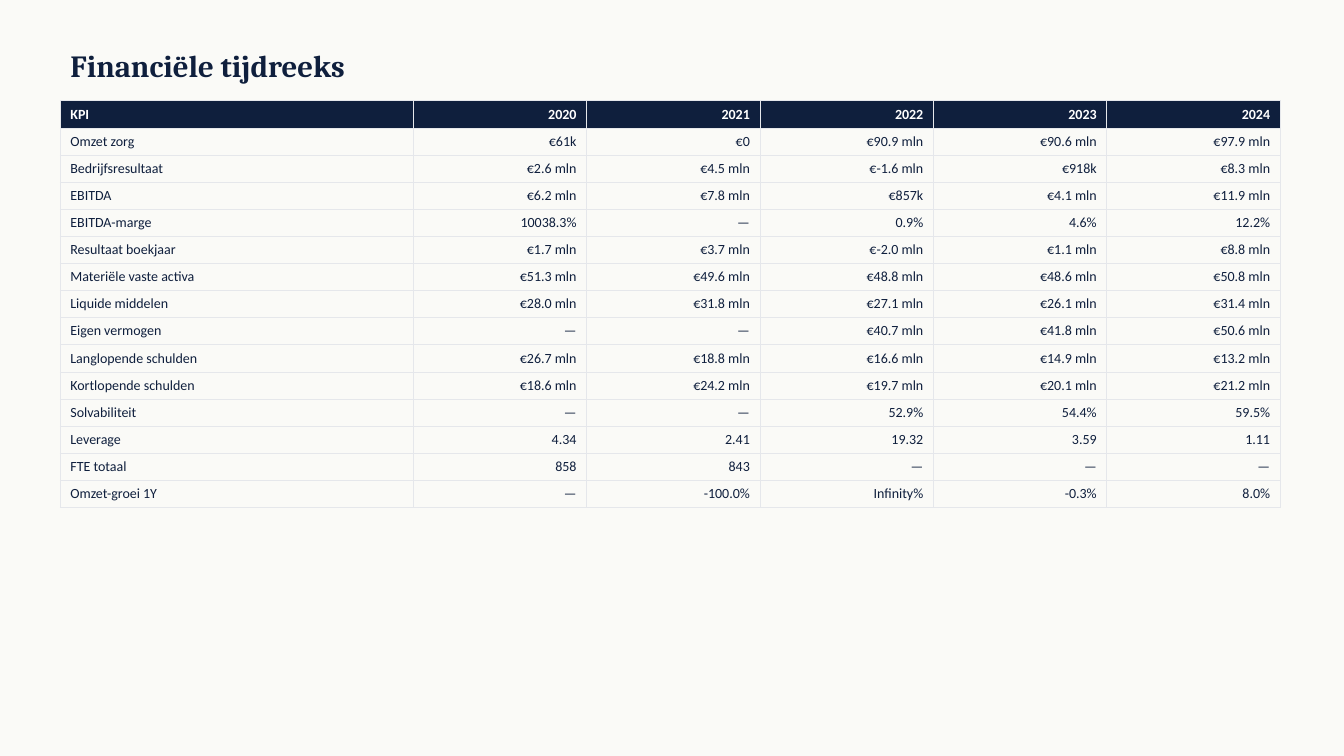
from lxml.etree import SubElement
from pptx import Presentation
from pptx.dml.color import RGBColor
from pptx.enum.text import MSO_ANCHOR, MSO_AUTO_SIZE, PP_ALIGN
from pptx.oxml.ns import qn
from pptx.util import Cm, Pt

NAVY, WHITE, PAPER, GRID = "0F1F3D", "FFFFFF", "FAFAF7", "E5E7EB"
TITLE = {"name": "Cambria", "size": Pt(22), "bold": True}
HEAD = {"name": "Calibri", "size": Pt(10), "bold": True}
BODY = HEAD | {"bold": False}

ROWS = [
    ("KPI", "2020", "2021", "2022", "2023", "2024"),
    ("Omzet zorg", "€61k", "€0", "€90.9 mln", "€90.6 mln", "€97.9 mln"),
    ("Bedrijfsresultaat", "€2.6 mln", "€4.5 mln", "€-1.6 mln", "€918k", "€8.3 mln"),
    ("EBITDA", "€6.2 mln", "€7.8 mln", "€857k", "€4.1 mln", "€11.9 mln"),
    ("EBITDA-marge", "10038.3%", "—", "0.9%", "4.6%", "12.2%"),
    ("Resultaat boekjaar", "€1.7 mln", "€3.7 mln", "€-2.0 mln", "€1.1 mln", "€8.8 mln"),
    ("Materiële vaste activa", "€51.3 mln", "€49.6 mln", "€48.8 mln", "€48.6 mln", "€50.8 mln"),
    ("Liquide middelen", "€28.0 mln", "€31.8 mln", "€27.1 mln", "€26.1 mln", "€31.4 mln"),
    ("Eigen vermogen", "—", "—", "€40.7 mln", "€41.8 mln", "€50.6 mln"),
    ("Langlopende schulden", "€26.7 mln", "€18.8 mln", "€16.6 mln", "€14.9 mln", "€13.2 mln"),
    ("Kortlopende schulden", "€18.6 mln", "€24.2 mln", "€19.7 mln", "€20.1 mln", "€21.2 mln"),
    ("Solvabiliteit", "—", "—", "52.9%", "54.4%", "59.5%"),
    ("Leverage", "4.34", "2.41", "19.32", "3.59", "1.11"),
    ("FTE totaal", "858", "843", "—", "—", "—"),
    ("Omzet-groei 1Y", "—", "-100.0%", "Infinity%", "-0.3%", "8.0%"),
]


def paint(fill, tint):
    """Fill with a solid colour given as a hex string."""
    fill.solid()
    fill.fore_color.rgb = RGBColor.from_string(tint)


class Deck:
    """Holds the style and the current slide."""

    def __init__(self):
        """Start a wide deck with one titled slide."""
        self.deck = Presentation()
        self.deck.slide_width, self.deck.slide_height = Cm(33.87), Cm(19.05)
        self.slide = self.deck.slides.add_slide(self.deck.slide_layouts[5])
        paint(self.slide.background.fill, PAPER)

    def label(self, frame, text, style, tint, align):
        """Put one styled paragraph in a text frame."""
        para = frame.paragraphs[0]
        para.alignment = align
        run = para.add_run()
        run.text = text
        for key, value in style.items():
            setattr(run.font, key, value)
        paint(run.font.fill, tint)

    def title(self, text, *box):
        """Place and format the title."""
        shape = self.slide.shapes.title
        shape.left, shape.top, shape.width, shape.height = map(Cm, box)
        frame = shape.text_frame
        frame.auto_size = MSO_AUTO_SIZE.NONE
        frame.vertical_anchor = MSO_ANCHOR.MIDDLE
        self.label(frame, text, TITLE, NAVY, PP_ALIGN.LEFT)

    def edge(self, cell):
        """Draw a thin line on each side of a cell."""
        props = cell._tc.get_or_add_tcPr()
        for side in "LRTB":
            line = SubElement(props, qn(f"a:ln{side}"), w=str(Pt(0.5)))
            SubElement(SubElement(line, qn("a:solidFill")), qn("a:srgbClr"), val=GRID)

    def table(self, rows, left, top, widths, height):
        """Add a table with a dark head and right-aligned figures."""
        box = Cm(left), Cm(top), Cm(sum(widths)), Cm(height * len(rows))
        table = self.slide.shapes.add_table(len(rows), len(widths), *box).table
        table.horz_banding = False
        for col, width in zip(table.columns, widths):
            col.width = Cm(width)
        for r, row in enumerate(rows):
            for c, text in enumerate(row):
                cell = table.cell(r, c)
                self.edge(cell)
                if r:
                    cell.fill.background()
                else:
                    paint(cell.fill, NAVY)
                style, tint = (BODY, NAVY) if r else (HEAD, WHITE)
                align = PP_ALIGN.RIGHT if c else PP_ALIGN.LEFT
                self.label(cell.text_frame, text, style, tint, align)


def main():
    """Build and save the slide."""
    deck = Deck()
    deck.title("Financiële tijdreeks", 1.52, 1.02, 30.48, 1.27)
    deck.table(ROWS, 1.52, 2.54, [8.89] + [4.37] * 5, 0.68)
    deck.deck.save("out.pptx")


if __name__ == "__main__":
    main()
